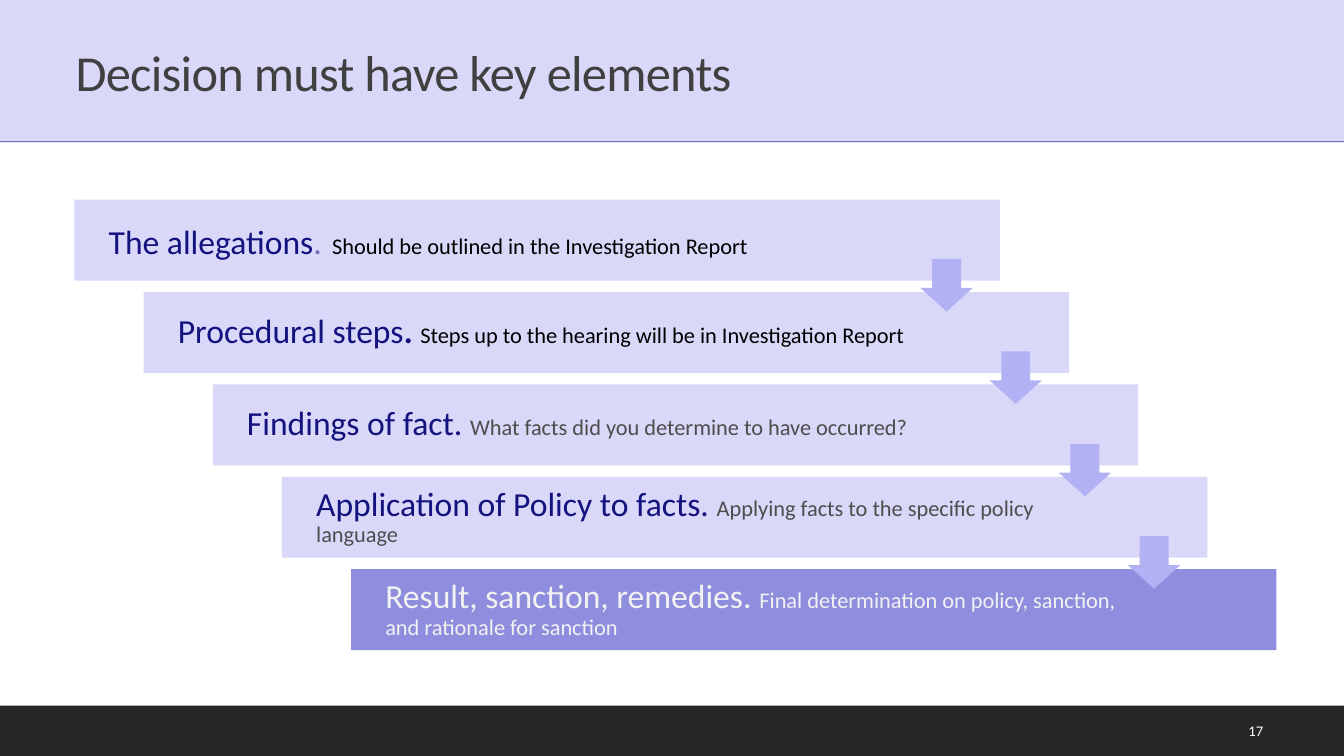
from dataclasses import dataclass
from pptx import Presentation
from pptx.dml.color import RGBColor
from pptx.enum.shapes import MSO_CONNECTOR, MSO_SHAPE
from pptx.enum.text import MSO_ANCHOR, MSO_AUTO_SIZE, PP_ALIGN
from pptx.oxml import parse_xml
from pptx.oxml.ns import nsdecls
from pptx.util import Pt


@dataclass(frozen=True)
class Theme:
    font: str = "Calibri"
    pale: str = "D9D8F9"
    deep: str = "8E8DDE"
    arrow: str = "B2B1F4"
    rule: str = "7876B8"
    foot: str = "262626"
    title: str = "404040"
    navy: str = "13127E"
    dot: str = "7170B9"
    black: str = "000000"
    gray: str = "4D4D4D"
    light: str = "F2F2F2"
    white: str = "FFFFFF"
    head: float = 36
    gap: float = 32
    lead: float = 24
    note: float = 16
    page: float = 10.5


look = Theme()
title = "Decision must have key elements"
number = "17"
steps = [
    (look.pale, [("The allegations", look.lead, look.navy, False),
                 (".", look.lead, look.dot, False),
                 (" ", look.gap, look.dot, False),
                 ("Should be outlined in the Investigation Report", look.note, look.black, False)]),
    (look.pale, [("Procedural steps", look.lead, look.navy, False),
                 (". ", look.lead, look.navy, True),
                 ("Steps up to the hearing will be in Investigation Report",
                  look.note, look.black, False)]),
    (look.pale, [("Findings of fact. ", look.lead, look.navy, False),
                 ("What facts did you determine to have occurred?", look.note, look.gray, False)]),
    (look.pale, [("Application of Policy to facts. ", look.lead, look.navy, False),
                 ("Applying facts to the specific policy language", look.note, look.gray, False)]),
    (look.deep, [("Result, sanction, remedies. ", look.lead, look.light, False),
                 ("Final determination on policy, sanction, and rationale for sanction",
                  look.note, look.light, False)]),
]

wide, high = 960, 540
left, top = 53.2, 142.6
step_x, step_y = 49.4, 66
bar_w, bar_h = 661, 57.8
arrow_x, arrow_y, arrow_w = 604.2, 42.4, 37.5


def apply(item, values):
    for name, value in values.items():
        setattr(item, name, value)


def place(item, x, y, w, h):
    apply(item, dict(left=Pt(x), top=Pt(y), width=Pt(w), height=Pt(h)))


def paint(item, color):
    item.fill.solid()
    item.fill.fore_color.rgb = RGBColor.from_string(color)


def block(kind, x, y, w, h, color):
    item = slide.shapes.add_shape(kind, Pt(x), Pt(y), Pt(w), Pt(h))
    item.shadow.inherit = False
    item.line.fill.background()
    paint(item, color)
    return item


def write(item, parts, pads, align=PP_ALIGN.LEFT, space=0.9):
    frame = item.text_frame
    sides = ("margin_left", "margin_top", "margin_right", "margin_bottom")
    apply(frame, dict(word_wrap=True, auto_size=MSO_AUTO_SIZE.NONE,
                      vertical_anchor=MSO_ANCHOR.MIDDLE))
    apply(frame, dict(zip(sides, map(Pt, pads))))
    para = frame.paragraphs[0]
    apply(para, dict(alignment=align, line_spacing=space))
    for text, size, color, bold in parts:
        run = para.add_run()
        run.text = text
        apply(run.font, dict(name=look.font, size=Pt(size), bold=bold))
        run.font.color.rgb = RGBColor.from_string(color)
    return para


deck = Presentation()
apply(deck, dict(slide_width=Pt(wide), slide_height=Pt(high)))
slide = deck.slides.add_slide(deck.slide_layouts[5])

head = slide.shapes.title
place(head, 0, 0, wide, 102)
paint(head, look.pale)
para = write(head, [(title, look.head, look.title, False)], (54, 8.6, 7.2, 3.6))
para.runs[0]._r.get_or_add_rPr().set("spc", "-50")

rule = slide.shapes.add_connector(MSO_CONNECTOR.STRAIGHT, 0, Pt(101), Pt(wide), Pt(101))
rule.line.width = Pt(1)
rule.line.color.rgb = RGBColor.from_string(look.rule)
rule._element.spPr.append(parse_xml(f"<a:effectLst {nsdecls('a')}/>"))

block(MSO_SHAPE.RECTANGLE, 0, 504, wide, 36, look.foot)
page = slide.shapes.add_textbox(Pt(860.4), Pt(507.6), Pt(49), Pt(28.8))
write(page, [(number, look.page, look.white, False)], (7.2, 3.6, 7.2, 3.6), PP_ALIGN.RIGHT, 1)

for i, (color, parts) in enumerate(steps):
    bar = block(MSO_SHAPE.RECTANGLE, left + i * step_x, top + i * step_y, bar_w, bar_h, color)
    write(bar, parts, (24.4, 7.2, 96, 7.2))

for i in range(len(steps) - 1):
    arrow = block(MSO_SHAPE.DOWN_ARROW, left + arrow_x + i * step_x,
                  top + arrow_y + i * step_y, arrow_w, arrow_w, look.arrow)
    arrow.adjustments[0], arrow.adjustments[1] = 0.55, 0.45

deck.save("out.pptx")
